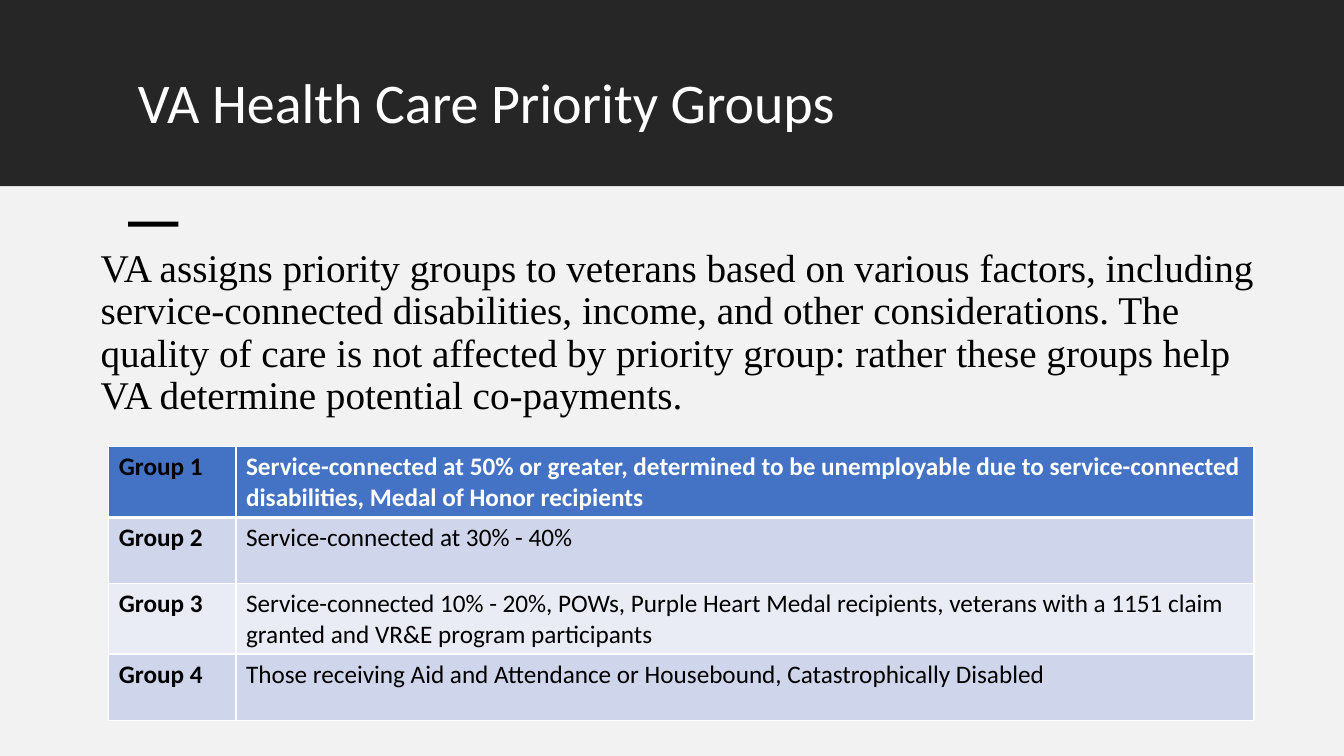
import lxml.etree
import pptx
import pptx.dml.color
import pptx.enum.shapes
import pptx.enum.text
import pptx.oxml.ns
import pptx.util

COLORS = {
    "band": "262626",
    "panel": "F2F2F2",
    "black": "000000",
    "white": "FFFFFF",
    "header": "4472C4",
    "odd": "CFD5EA",
    "even": "E9EBF5",
}
FORMATS = {
    "title": {"name": "Calibri", "size": pptx.util.Pt(40)},
    "body": {"name": "Times New Roman", "size": pptx.util.Pt(28)},
    "cell": {"name": "Calibri", "size": pptx.util.Pt(18)},
}
GROUPS = [
    "Service-connected at 50% or greater, determined to be unemployable due to "
    "service-connected disabilities, Medal of Honor recipients",
    "Service-connected at 30% - 40%",
    "Service-connected 10% - 20%, POWs, Purple Heart Medal recipients, veterans "
    "with a 1151 claim granted and VR&E program participants",
    "Those receiving Aid and Attendance or Housebound, Catastrophically Disabled",
]
INTRODUCTION = (
    "VA assigns priority groups to veterans based on various factors, including "
    "service-connected disabilities, income, and other considerations. The quality "
    "of care is not affected by priority group: rather these groups help VA "
    "determine potential co-payments."
)


class SlideBuilder:
    """Draws styled elements on a grid of 160 columns by 90 rows."""

    def __init__(self, presentation):
        self.unit = presentation.slide_width / 160
        self.slide = presentation.slides.add_slide(presentation.slide_layouts[6])

    def grid(self, *lengths):
        return [round(length * self.unit) for length in lengths]

    def color(self, name):
        return pptx.dml.color.RGBColor.from_string(COLORS[name])

    def fill(self, target, name):
        target.fill.solid()
        target.fill.fore_color.rgb = self.color(name)

    def rectangle(self, name, *box):
        kind = pptx.enum.shapes.MSO_SHAPE.RECTANGLE
        shape = self.slide.shapes.add_shape(kind, *self.grid(*box))
        shape.shadow.inherit = False
        shape.line.fill.background()
        self.fill(shape, name)

    def add_words(self, paragraph, text, style, color, **extra):
        run = paragraph.add_run()
        run.text = text
        for attribute, value in {**FORMATS[style], **extra}.items():
            setattr(run.font, attribute, value)
        run.font.color.rgb = self.color(color)

    def text(self, text, style, color, *box, **spacing):
        frame = self.slide.shapes.add_textbox(*self.grid(*box)).text_frame
        frame.word_wrap = True
        frame.vertical_anchor = pptx.enum.text.MSO_ANCHOR.TOP
        paragraph = frame.paragraphs[0]
        for attribute, value in {"line_spacing": 0.9, **spacing}.items():
            setattr(paragraph, attribute, value)
        self.add_words(paragraph, text, style, color)

    def borders(self, cell, **widths):
        properties = cell._tc.get_or_add_tcPr()
        for side in "LRTB":
            width = pptx.util.Pt(widths.get(side, 1))
            line = lxml.etree.SubElement(
                properties, pptx.oxml.ns.qn(f"a:ln{side}"), w=str(width))
            solid = lxml.etree.SubElement(line, pptx.oxml.ns.qn("a:solidFill"))
            lxml.etree.SubElement(
                solid, pptx.oxml.ns.qn("a:srgbClr"), val=COLORS["white"])

    def table(self, descriptions, left, top, widths, row_height):
        count = len(descriptions)
        box = self.grid(left, top, sum(widths), row_height * count)
        table = self.slide.shapes.add_table(count, len(widths), *box).table
        for column, width in zip(table.columns, self.grid(*widths)):
            column.width = width
        for row, description in enumerate(descriptions):
            background = ("even" if row % 2 == 0 else "odd") if row else "header"
            edges = {0: {"B": 3}, 1: {"T": 3}}.get(row, {})
            for column, text in enumerate((f"Group {row + 1}", description)):
                cell = table.cell(row, column)
                self.borders(cell, **edges)
                self.fill(cell, background)
                color = "white" if row == 0 and column == 1 else "black"
                self.add_words(cell.text_frame.paragraphs[0], text, "cell", color,
                               bold=row == 0 or column == 0)


def main():
    presentation = pptx.Presentation()
    presentation.slide_width = pptx.util.Inches(13.33)
    presentation.slide_height = pptx.util.Inches(7.5)
    builder = SlideBuilder(presentation)
    builder.rectangle("band", 0, 0, 160, 22.2)
    builder.text("VA Health Care Priority Groups", "title", "white",
                 15.25, 8.4, 129.7, 11.75)
    builder.rectangle("panel", 0, 22.2, 160, 67.8)
    builder.rectangle("black", 15.25, 26.4, 6, 0.6)
    builder.text(INTRODUCTION, "body", "black", 10.8, 29, 140.5, 57.8,
                 space_before=pptx.util.Pt(10))
    builder.table(GROUPS, 12.95, 53.2, (15.15, 121.2), 7.87)
    presentation.save("out.pptx")


if __name__ == "__main__":
    main()
